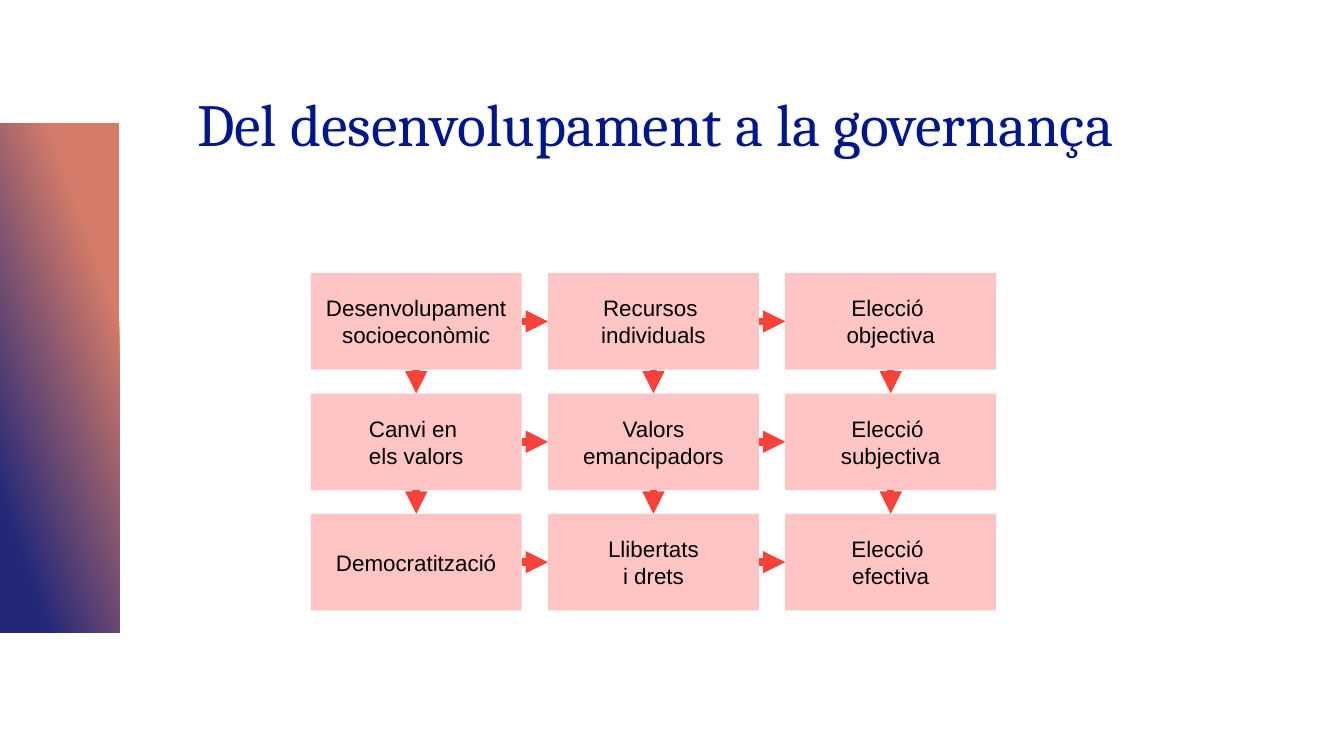
"""Build a slide with a three-by-three flow from development to governance."""
import lxml.etree
import pptx
import pptx.dml.color
import pptx.enum.shapes
import pptx.enum.text
import pptx.oxml.ns
import pptx.util

Pt = pptx.util.Pt
SHAPE = pptx.enum.shapes.MSO_SHAPE
ANCHOR = pptx.enum.text.MSO_ANCHOR
ALIGN = pptx.enum.text.PP_ALIGN

COLORS = {
    "title": "001789",
    "box": "FFC5C5",
    "text": "000000",
    "arrow": "F9423A",
    "coral": "D47C68",
    "navy": "222778",
}
STAGES = [
    ["Desenvolupament socioeconòmic", "Recursos \nindividuals", "Elecció \nobjectiva"],
    ["Canvi en \nels valors", "Valors\nemancipadors", "Elecció \nsubjectiva"],
    ["Democratització", "Llibertats\ni drets", "Elecció \nefectiva"],
]
GRID_LEFT, GRID_TOP = 166.5, 146.3
BOX_WIDTH, BOX_HEIGHT = 113, 51.8
COLUMN_STEP, ROW_STEP = 127.1, 64.5
TOP, LEFT, BOTTOM, RIGHT = range(4)


def rgb(name):
    return pptx.dml.color.RGBColor.from_string(COLORS[name])


def write(frame, text, *, font, size, color, anchor, align=ALIGN.LEFT, spacing=1.0):
    frame.word_wrap = True
    frame.vertical_anchor = anchor
    frame.text = text
    for paragraph in frame.paragraphs:
        paragraph.alignment = align
        paragraph.line_spacing = spacing
        paragraph.font.name = font
        paragraph.font.size = Pt(size)
        paragraph.font.color.rgb = rgb(color)


def add_rectangle(slide, left, top, width, height):
    rectangle = slide.shapes.add_shape(
        SHAPE.RECTANGLE, Pt(left), Pt(top), Pt(width), Pt(height))
    rectangle.shadow.inherit = False
    rectangle.line.fill.background()
    return rectangle


def add_band(slide):
    band = add_rectangle(slide, 0, 66, 64, 273)
    band.fill.gradient()
    band.fill.gradient_angle = 200
    stops = [("coral", 0.23), ("navy", 0.85)]
    for stop, (color, position) in zip(band.fill.gradient_stops, stops):
        stop.color.rgb = rgb(color)
        stop.position = position


def add_title(slide, text):
    title = slide.shapes.add_textbox(Pt(98.6), Pt(20.2), Pt(599), Pt(69))
    write(title.text_frame, text, font="Cambria", size=32, color="title",
          anchor=ANCHOR.BOTTOM, spacing=0.9)


def add_stage(slide, row, column, text):
    stage = add_rectangle(slide, GRID_LEFT + column * COLUMN_STEP,
                          GRID_TOP + row * ROW_STEP, BOX_WIDTH, BOX_HEIGHT)
    stage.fill.solid()
    stage.fill.fore_color.rgb = rgb("box")
    write(stage.text_frame, text, font="Arial", size=12, color="text",
          anchor=ANCHOR.MIDDLE, align=ALIGN.CENTER)
    return stage


def add_arrow(slide, source, source_side, target, target_side):
    arrow = slide.shapes.add_connector(
        pptx.enum.shapes.MSO_CONNECTOR.STRAIGHT, 0, 0, 0, 0)
    arrow.begin_connect(source, source_side)
    arrow.end_connect(target, target_side)
    arrow.line.color.rgb = rgb("arrow")
    arrow.line.width = Pt(4)
    qn = pptx.oxml.ns.qn
    properties = arrow.line._get_or_add_ln()
    lxml.etree.SubElement(properties, qn("a:tailEnd"), type="triangle")
    lxml.etree.SubElement(properties.getparent(), qn("a:effectLst"))


def main():
    presentation = pptx.Presentation()
    presentation.slide_width = Pt(720)
    presentation.slide_height = Pt(405)
    slide = presentation.slides.add_slide(presentation.slide_layouts[6])
    add_band(slide)
    add_title(slide, "Del desenvolupament a la governança")
    stages = [[add_stage(slide, row, column, text) for column, text in enumerate(texts)]
              for row, texts in enumerate(STAGES)]
    for row in stages:
        for source, target in zip(row, row[1:]):
            add_arrow(slide, source, RIGHT, target, LEFT)
    for upper, lower in zip(stages, stages[1:]):
        for source, target in zip(upper, lower):
            add_arrow(slide, source, BOTTOM, target, TOP)
    presentation.save("out.pptx")


if __name__ == "__main__":
    main()
